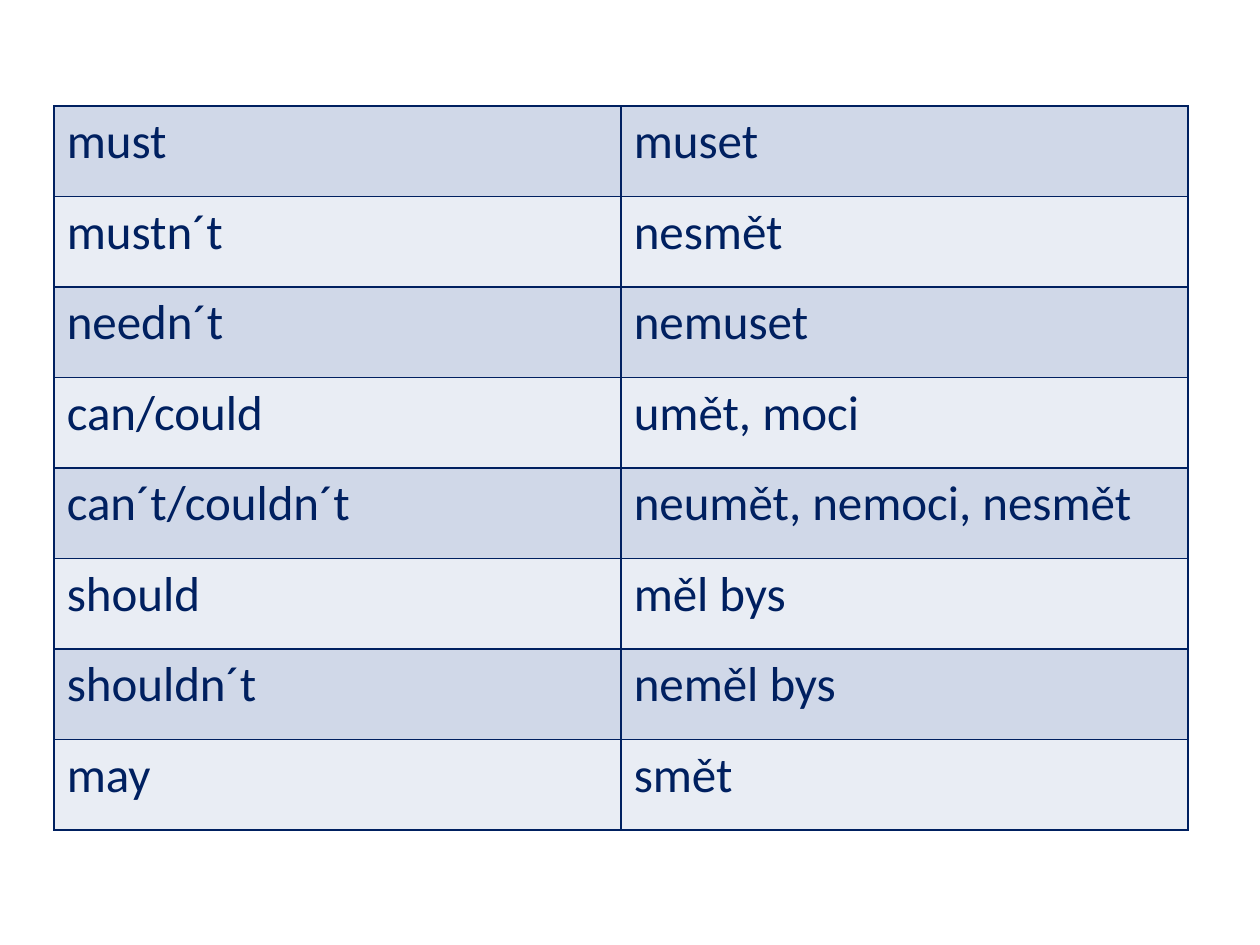
from dataclasses import dataclass

from lxml import etree
from pptx import Presentation
from pptx import util as u
from pptx.dml.color import RGBColor
from pptx.oxml import ns


@dataclass(frozen=True)
class Theme:
    font: str = "Calibri"
    size: int = 28
    ink: str = "002060"
    bands: tuple = ("D0D8E8", "E9EDF4")
    rule: int = 1


@dataclass(frozen=True)
class Verb:
    modal: str
    czech: str


LOOK = Theme()
VERBS = [
    Verb("must", "muset"),
    Verb("mustn´t", "nesmět"),
    Verb("needn´t", "nemuset"),
    Verb("can/could", "umět, moci"),
    Verb("can´t/couldn´t", "neumět, nemoci, nesmět"),
    Verb("should", "měl bys"),
    Verb("shouldn´t", "neměl bys"),
    Verb("may", "smět"),
]


def add_rules(cell) -> None:
    props = cell._tc.get_or_add_tcPr()
    for spot, side in enumerate(("lnL", "lnR", "lnT", "lnB")):
        line = etree.Element(ns.qn(f"a:{side}"), w=str(u.Pt(LOOK.rule)))
        fill = etree.SubElement(line, ns.qn("a:solidFill"))
        etree.SubElement(fill, ns.qn("a:srgbClr"), val=LOOK.ink)
        props.insert(spot, line)


def fill_cell(cell, words: str, band: str) -> None:
    cell.fill.solid()
    cell.fill.fore_color.rgb = RGBColor.from_string(band)
    add_rules(cell)
    cell.text_frame.text = words
    font = cell.text_frame.paragraphs[0].runs[0].font
    font.name = LOOK.font
    font.size = u.Pt(LOOK.size)
    font.color.rgb = RGBColor.from_string(LOOK.ink)


def add_verbs(slide, verbs: list[Verb]) -> None:
    frame = slide.shapes.add_table(
        len(verbs), 2, u.Inches(0.43), u.Inches(0.84), u.Inches(9), u.Inches(5.75)
    )
    table = frame.table
    table.first_row = False
    for row, verb in enumerate(verbs):
        band = LOOK.bands[row % 2]
        for col, words in enumerate((verb.modal, verb.czech)):
            fill_cell(table.cell(row, col), words, band)


def main() -> None:
    deck = Presentation()
    deck.slide_width = u.Inches(10)
    deck.slide_height = u.Inches(7.5)
    slide = deck.slides.add_slide(deck.slide_layouts[6])
    add_verbs(slide, VERBS)
    deck.save("out.pptx")


if __name__ == "__main__":
    main()
